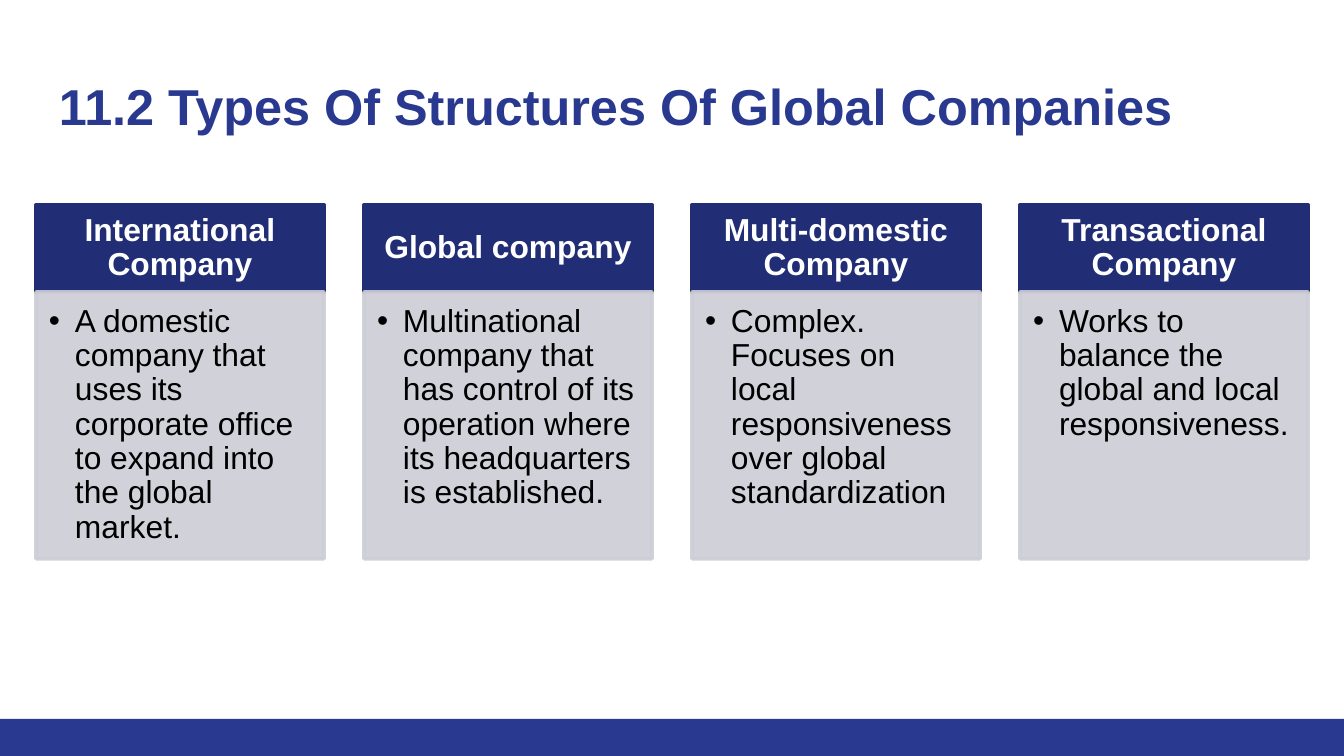
from lxml import etree
from pptx import Presentation
from pptx.dml.color import RGBColor
from pptx.enum.shapes import MSO_SHAPE
from pptx.enum.text import MSO_ANCHOR, PP_ALIGN
from pptx.oxml.ns import qn
from pptx.util import Emu, Pt

RECTANGLE = MSO_SHAPE.RECTANGLE
TOP, MIDDLE, BOTTOM = MSO_ANCHOR.TOP, MSO_ANCHOR.MIDDLE, MSO_ANCHOR.BOTTOM
LEFT, CENTER = PP_ALIGN.LEFT, PP_ALIGN.CENTER

EMU_PER_PX = 914400 / 134.4
SLIDE_WIDTH, SLIDE_HEIGHT = 1344, 756
FIRST_LEFT, COLUMN_PITCH, COLUMN_WIDTH = 36, 328, 288
HEADER_TOP, HEADER_HEIGHT, BODY_HEIGHT = 205, 87, 267

COMPANY_TYPES = [
    ("International Company",
     "A domestic company that uses its corporate office to expand into the global market."),
    ("Global company",
     "Multinational company that has control of its operation where its headquarters is established."),
    ("Multi-domestic Company",
     "Complex. Focuses on local responsiveness over global standardization"),
    ("Transactional Company",
     "Works to balance the global and local responsiveness."),
]


def px(length):
    return Emu(round(length * EMU_PER_PX))


def color(value):
    return RGBColor.from_string(value)


class CompanySlide:
    font = "Arial"
    brand, header_blue, panel_gray = "2A3990", "212D74", "CDCDD6"
    white, black = "FFFFFF", "000000"
    title_size, column_size = 27, 17

    def __init__(self, slide):
        self.slide = slide

    def rectangle(self, box, fill, outlined=True, alpha=100):
        shape = self.slide.shapes.add_shape(RECTANGLE, *map(px, box))
        shape.shadow.inherit = False
        shape.fill.solid()
        shape.fill.fore_color.rgb = color(fill)
        if outlined:
            shape.line.color.rgb = color(fill)
            shape.line.width = Pt(2)
        else:
            shape.line.fill.background()
        if alpha < 100:
            for tint in shape._element.spPr.iter(qn("a:srgbClr")):
                etree.SubElement(tint, qn("a:alpha"), val=str(alpha * 1000))
        return shape

    def add_text(self, shape, text, size, ink, insets, anchor=TOP, align=LEFT, bold=False):
        frame = shape.text_frame
        frame.word_wrap = True
        frame.vertical_anchor = anchor
        (frame.margin_left, frame.margin_top,
         frame.margin_right, frame.margin_bottom) = map(px, insets)
        paragraph = frame.paragraphs[0]
        paragraph.alignment = align
        run = paragraph.add_run()
        run.text = text
        run.font.name = self.font
        run.font.size = Pt(size)
        run.font.bold = bold
        run.font.color.rgb = color(ink)
        return paragraph

    def title(self, text, box):
        shape = self.slide.shapes.add_textbox(*map(px, box))
        self.add_text(shape, text, self.title_size, self.brand, (13, 13, 13, 13),
                      anchor=BOTTOM, bold=True)

    def header(self, text, box):
        shape = self.rectangle(box, self.header_blue)
        paragraph = self.add_text(shape, text, self.column_size, self.white,
                                  (17, 11, 17, 11), MIDDLE, CENTER, True)
        paragraph.line_spacing = 0.9

    def description(self, text, box):
        shape = self.rectangle(box, self.panel_gray, alpha=90)
        paragraph = self.add_text(shape, text, self.column_size, self.black, (13, 13, 17, 20))
        paragraph.level = 1
        paragraph.line_spacing = 0.9
        properties = paragraph._p.get_or_add_pPr()
        properties.set("marL", str(px(26)))
        properties.set("indent", str(-px(26)))
        bullet_color = etree.SubElement(properties, qn("a:buClr"))
        etree.SubElement(bullet_color, qn("a:srgbClr"), val=self.black)
        etree.SubElement(properties, qn("a:buFont"), typeface=self.font)
        etree.SubElement(properties, qn("a:buChar"), char="•")


def main():
    presentation = Presentation()
    presentation.slide_width = px(SLIDE_WIDTH)
    presentation.slide_height = px(SLIDE_HEIGHT)
    page = CompanySlide(presentation.slides.add_slide(presentation.slide_layouts[6]))

    page.rectangle((0, 719, SLIDE_WIDTH, 37), page.brand, outlined=False)
    page.title("11.2 Types Of Structures Of Global Companies", (46, 60, 1252, 89))
    for column, (company, meaning) in enumerate(COMPANY_TYPES):
        left = FIRST_LEFT + column * COLUMN_PITCH
        page.header(company, (left, HEADER_TOP, COLUMN_WIDTH, HEADER_HEIGHT))
        page.description(meaning, (left, HEADER_TOP + HEADER_HEIGHT, COLUMN_WIDTH, BODY_HEIGHT))

    presentation.save("out.pptx")


if __name__ == "__main__":
    main()
